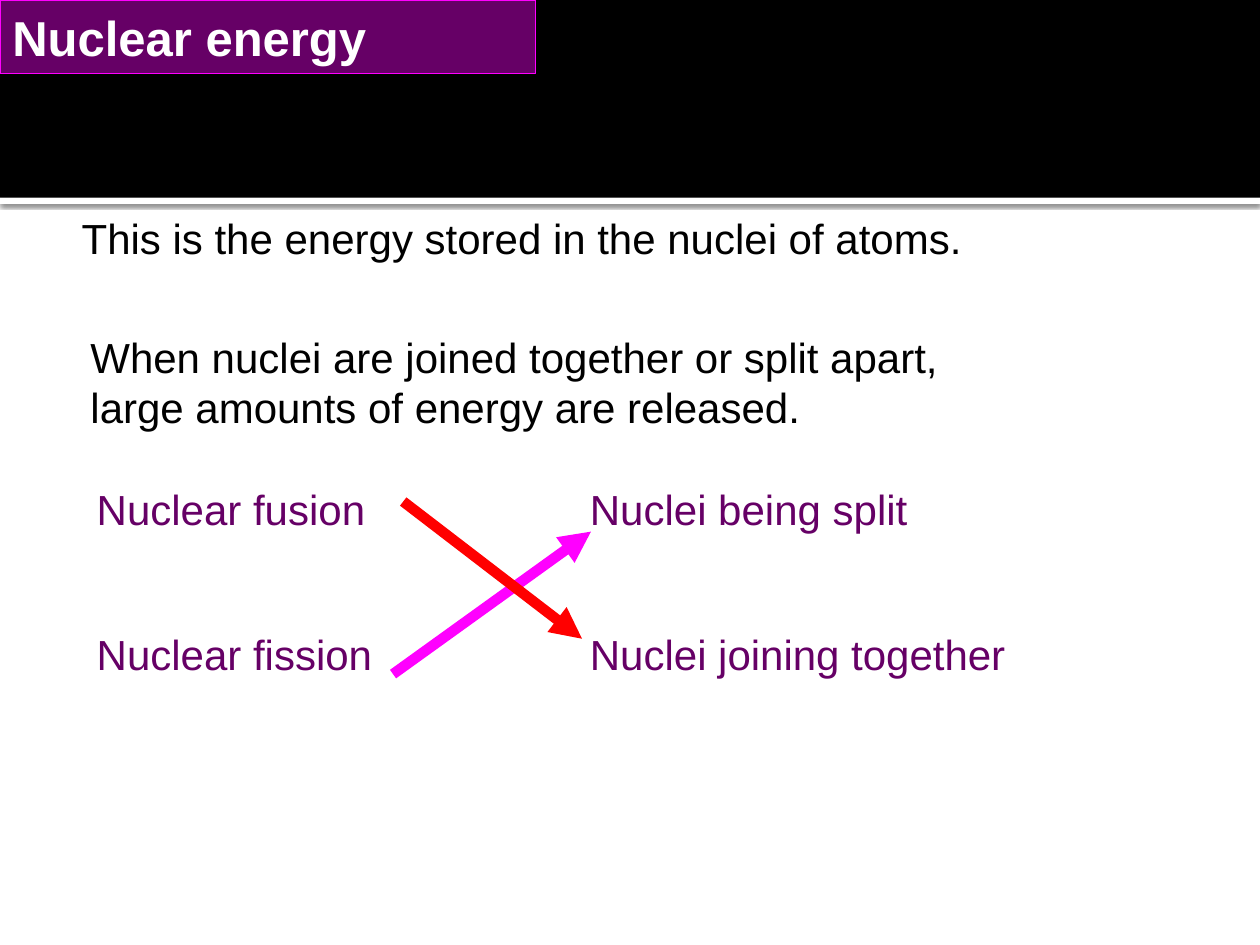
from lxml.etree import SubElement
from pptx import Presentation
from pptx.dml.color import RGBColor
from pptx.enum.shapes import MSO_CONNECTOR, MSO_SHAPE
from pptx.enum.text import MSO_ANCHOR, PP_ALIGN
from pptx.oxml.ns import qn
from pptx.util import Pt

BLACK = RGBColor(0, 0, 0)
WHITE = RGBColor(255, 255, 255)
PURPLE = RGBColor(0x66, 0, 0x66)
MAGENTA = RGBColor(255, 0, 255)
RED = RGBColor(255, 0, 0)

# Content; all lengths in points
WIDTH, HEIGHT = 720, 540
BAND_HEIGHT, STRIPE_HEIGHT = 113, 3.6
TITLE = "Nuclear energy"
TITLE_BOX = (0, 0, 306, 42)
PAIR_TOP, PAIR_GAP = 273, 54
TEXTS = [  # box, paragraphs, colour
    ((39.6, 118, 612, 79), ["This is the energy stored in the nuclei of atoms."], BLACK),
    ((44.6, 185.8, 552, 65),
     ["When nuclei are joined together or split apart, large amounts of energy are released."],
     BLACK),
    ((48.2, PAIR_TOP, 246, 166), ["Nuclear fusion", "Nuclear fission"], PURPLE),
    ((330, PAIR_TOP, 360, 122), ["Nuclei being split", "Nuclei joining together"], PURPLE),
]
ARROWS = [  # start, end, colour
    ((224.6, 385.2), (337.7, 303.8), MAGENTA),
    ((230.4, 286.6), (332.6, 365), RED),
]


def add_bar(page, box, fill, line=None):
    bar = page.shapes.add_shape(MSO_SHAPE.RECTANGLE, *map(Pt, box))
    bar.shadow.inherit = False
    bar.fill.solid()
    bar.fill.fore_color.rgb = fill
    if line is None:
        bar.line.fill.background()
    else:
        bar.line.color.rgb = line
        bar.line.width = Pt(0.75)
    return bar


def write(frame, lines, font, gap=0):
    frame.word_wrap = True
    for index, line in enumerate(lines):
        para = frame.paragraphs[0] if index == 0 else frame.add_paragraph()
        para.alignment = PP_ALIGN.LEFT
        para.space_before = Pt(gap if index else 0)
        span = para.add_run()
        span.text = line
        for name, value in font.items():
            setattr(span.font, name, value)
        span.font.color.rgb = font_colour(frame, lines)


def font_colour(frame, lines):
    return WHITE if lines == [TITLE] else next(c for _, t, c in TEXTS if t == lines)


def add_stripe_shadow(stripe):
    effects = stripe._element.spPr.find(qn("a:effectLst"))
    shadow = SubElement(effects, qn("a:outerShdw"), blurRad=str(Pt(2.5)),
                        dist=str(Pt(0.8)), dir="5400000", rotWithShape="0")
    colour = SubElement(shadow, qn("a:srgbClr"), val=str(BLACK))
    SubElement(colour, qn("a:alpha"), val="60000")


def add_arrow(page, start, end, colour):
    arrow = page.shapes.add_connector(MSO_CONNECTOR.STRAIGHT, *map(Pt, start + end))
    arrow.line.color.rgb = colour
    arrow.line.width = Pt(6)
    SubElement(arrow.line._get_or_add_ln(), qn("a:tailEnd"), type="triangle")
    SubElement(arrow._element.spPr, qn("a:effectLst"))


def main():
    deck = Presentation()
    deck.slide_width, deck.slide_height = Pt(WIDTH), Pt(HEIGHT)
    page = deck.slides.add_slide(deck.slide_layouts[6])

    # Header band, stripe and title
    add_stripe_shadow(add_bar(page, (0, BAND_HEIGHT, WIDTH, STRIPE_HEIGHT), WHITE))
    add_bar(page, (0, 0, WIDTH, BAND_HEIGHT), BLACK)
    title = add_bar(page, TITLE_BOX, PURPLE, MAGENTA)
    title.text_frame.vertical_anchor = MSO_ANCHOR.MIDDLE
    write(title.text_frame, [TITLE], {"name": "Arial", "size": Pt(28), "bold": True})

    # Statements and the two columns to match
    for box, lines, _ in TEXTS:
        frame = page.shapes.add_textbox(*map(Pt, box)).text_frame
        write(frame, lines, {"name": "Arial", "size": Pt(24)}, PAIR_GAP)

    # Matching arrows
    for start, end, colour in ARROWS:
        add_arrow(page, start, end, colour)

    deck.save("out.pptx")


if __name__ == "__main__":
    main()
